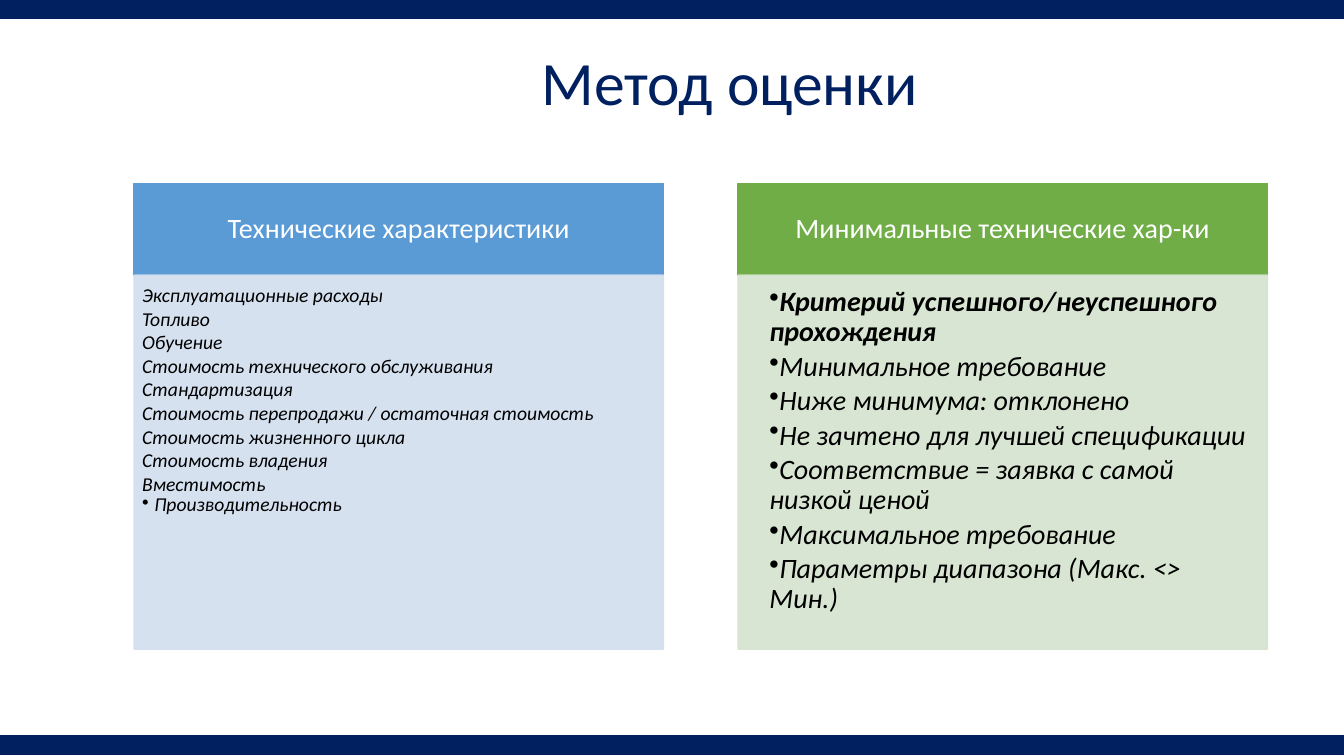
from pptx import Presentation
from pptx.dml.color import RGBColor
from pptx.enum import shapes, text
from pptx.oxml import ns, xmlchemy
from pptx.util import Inches, Pt

NAVY = RGBColor(0x00, 0x20, 0x60)
BLUE = RGBColor(0x5B, 0x9B, 0xD5)
PALE_BLUE = RGBColor(0xD2, 0xDE, 0xEF)
GREEN = RGBColor(0x70, 0xAD, 0x47)
PALE_GREEN = RGBColor(0xD5, 0xE3, 0xCF)
WHITE = RGBColor(0xFF, 0xFF, 0xFF)
BLACK = RGBColor(0x00, 0x00, 0x00)

SLIDE_WIDTH, SLIDE_HEIGHT = 13.33, 7.5
BAR_HEIGHT = 0.18
COLUMN_WIDTH = 5.25
HEADER_TOP, HEADER_HEIGHT = 1.82, 0.91
BODY_HEIGHT = 3.71

COSTS = [
    "Эксплуатационные расходы",
    "Топливо",
    "Обучение",
    "Стоимость технического обслуживания",
    "Стандартизация",
    "Стоимость перепродажи / остаточная стоимость",
    "Стоимость жизненного цикла",
    "Стоимость владения",
    "Вместимость",
]
CAPACITY = "Производительность"
CRITERION = "Критерий успешного/неуспешного прохождения"
REQUIREMENTS = [
    "Минимальное требование",
    "Ниже минимума: отклонено",
    "Не зачтено для лучшей спецификации",
    "Соответствие = заявка с самой низкой ценой",
    "Максимальное требование",
    "Параметры диапазона (Макс. <> Мин.)",
]


def apply(target, values):
    for name, value in values.items():
        setattr(target, name, value)


def add_panel(page, left, top, width, height, color, opacity=100):
    panel = page.shapes.add_shape(
        shapes.MSO_SHAPE.RECTANGLE,
        Inches(left), Inches(top), Inches(width), Inches(height))
    panel.shadow.inherit = False
    panel.fill.solid()
    panel.fill.fore_color.rgb = color
    panel.line.color.rgb = color
    panel.line.width = Pt(1)
    if opacity < 100:
        for shade in panel.element.spPr.iter(ns.qn("a:srgbClr")):
            alpha = xmlchemy.OxmlElement("a:alpha")
            alpha.set("val", str(opacity * 1000))
            shade.append(alpha)
    return panel


def set_frame(box, anchor, insets):
    sides = ("margin_left", "margin_top", "margin_right", "margin_bottom")
    margins = {side: Inches(inset) for side, inset in zip(sides, insets)}
    apply(box.text_frame,
          {"word_wrap": True, "vertical_anchor": anchor, **margins})


def add_bullet(para, indent, hanging):
    properties = para._p.get_or_add_pPr()
    properties.set("marL", str(Inches(indent)))
    properties.set("indent", str(-Inches(hanging)))
    bullet = xmlchemy.OxmlElement("a:buChar")
    bullet.set("char", "•")
    properties.append(bullet)


def write(box, lines, size, color, align=text.PP_ALIGN.LEFT, spacing=0.9,
          after=0, bullet=None, **style):
    frame = box.text_frame
    for line in lines:
        para = frame.paragraphs[0]
        if para.runs:
            para = frame.add_paragraph()
        if bullet:
            add_bullet(para, *bullet)
        apply(para, {"alignment": align, "line_spacing": spacing,
                     "space_before": Pt(0), "space_after": Pt(after)})
        span = para.add_run()
        span.text = line
        apply(span.font, {"name": "Calibri", "size": Pt(size), **style})
        span.font.color.rgb = color


def add_title(page, title):
    box = page.shapes.add_textbox(
        Inches(2.06), Inches(0.37), Inches(10.36), Inches(0.95))
    set_frame(box, text.MSO_ANCHOR.MIDDLE, (0.1, 0.05, 0.1, 0.05))
    write(box, [title], 44, NAVY, text.PP_ALIGN.CENTER)


def add_column(page, left, heading, color, pale, insets):
    header = add_panel(page, left, HEADER_TOP, COLUMN_WIDTH, HEADER_HEIGHT,
                       color)
    set_frame(header, text.MSO_ANCHOR.MIDDLE, (0.16, 0.09, 0.16, 0.09))
    write(header, [heading], 20, WHITE, text.PP_ALIGN.CENTER)
    body = add_panel(page, left, HEADER_TOP + HEADER_HEIGHT, COLUMN_WIDTH,
                     BODY_HEIGHT, pale, opacity=90)
    set_frame(body, text.MSO_ANCHOR.TOP, insets)
    return body


def main():
    deck = Presentation()
    deck.slide_width = Inches(SLIDE_WIDTH)
    deck.slide_height = Inches(SLIDE_HEIGHT)
    page = deck.slides.add_slide(deck.slide_layouts[6])

    for top in (7.3, 0):
        add_panel(page, 0, top, SLIDE_WIDTH, BAR_HEIGHT, NAVY)
    add_title(page, "Метод оценки")

    costs = add_column(page, 1.33, "Технические характеристики",
                       BLUE, PALE_BLUE, (0.08, 0.08, 0.11, 0.12))
    write(costs, COSTS, 14, BLACK, spacing=1.0, italic=True)
    write(costs, [CAPACITY], 14, BLACK, bullet=(0.12, 0.12), italic=True)

    limits = add_column(page, 7.32, "Минимальные технические хар-ки",
                        GREEN, PALE_GREEN, (0.12, 0.12, 0.16, 0.17))
    listing = {"size": 20, "color": BLACK, "after": 3, "bullet": (0.19, 0),
               "italic": True}
    write(limits, [CRITERION], bold=True, **listing)
    write(limits, REQUIREMENTS, **listing)

    deck.save("out.pptx")


if __name__ == "__main__":
    main()
